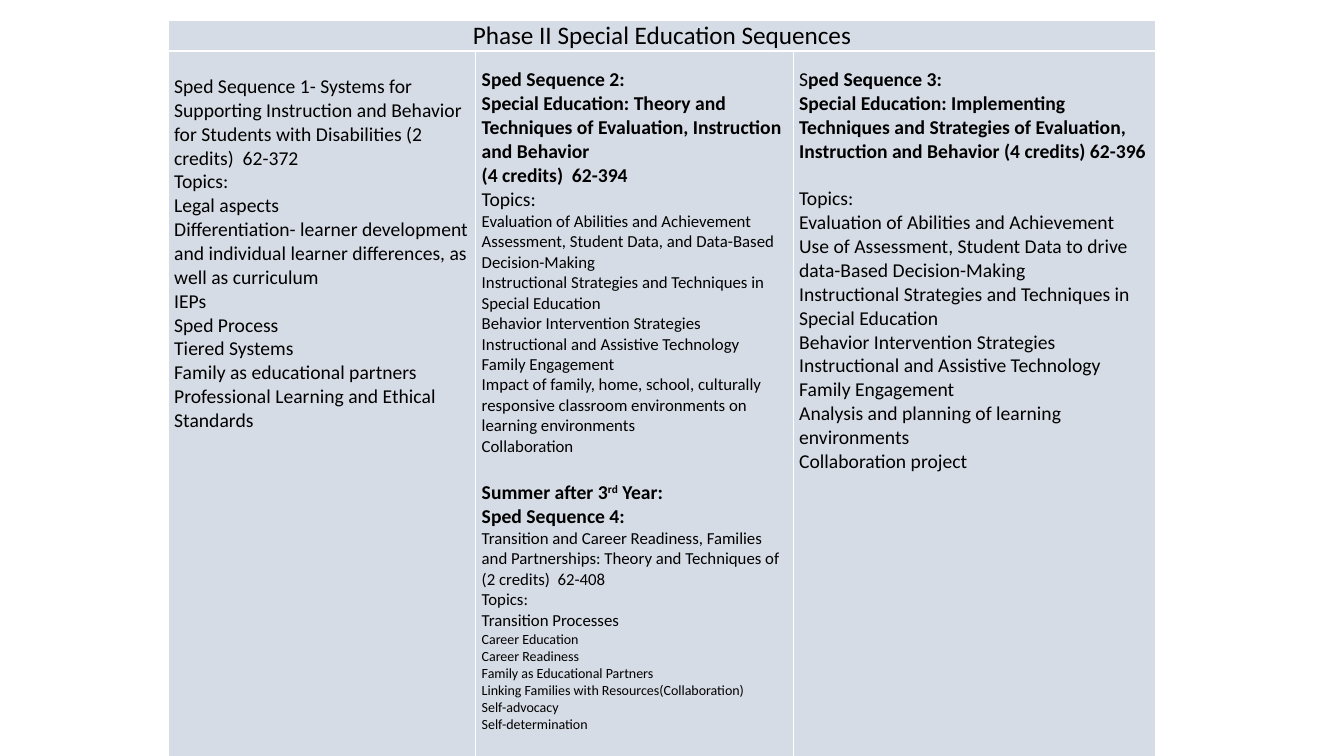
"""Builds the slide with the table of special education sequences."""
import pptx
import pptx.dml.color
import pptx.enum.text
import pptx.oxml
import pptx.util

Cm = pptx.util.Cm
FONT = "Calibri"
INK = "000000"
FILL = "D6DCE5"
LINE = "FFFFFF"
WIDTHS = [7.75, 8, 9.14]
HEIGHTS = [0.76, 19.56]
TITLE = [(18, False, 0, ["Phase II Special Education Sequences"])]

FIRST = [
    (14, False, 0, [
        "Sped Sequence 1- Systems for Supporting Instruction and Behavior "
        "for Students with Disabilities (2 credits)  62-372",
        "Topics:",
        "Legal aspects",
        "Differentiation- learner development and individual learner "
        "differences, as well as curriculum",
        "IEPs",
        "Sped Process",
        "Tiered Systems",
        "Family as educational partners",
        "Professional Learning and Ethical Standards",
    ]),
]

SECOND = [
    (14, True, 0, [
        "Sped Sequence 2:",
        "Special Education: Theory and Techniques of Evaluation, "
        "Instruction and Behavior",
        "(4 credits)  62-394",
    ]),
    (14, False, 0, ["Topics:"]),
    (12, False, 0, [
        "Evaluation of Abilities and Achievement",
        "Assessment, Student Data, and Data-Based Decision-Making",
        "Instructional Strategies and Techniques in Special Education",
        "Behavior Intervention Strategies",
        "Instructional and Assistive Technology",
        "Family Engagement",
        "Impact of family, home, school, culturally responsive classroom "
        "environments on learning environments",
        "Collaboration",
    ]),
    (14, True, 17, ["Summer after 3|rd| Year:", "Sped Sequence 4:"]),
    (12, False, 0, [
        "Transition and Career Readiness, Families and Partnerships: "
        "Theory and Techniques of (2 credits)  62-408",
        "Topics:",
        "Transition Processes",
    ]),
    (10, False, 0, [
        "Career Education",
        "Career Readiness",
        "Family as Educational Partners",
        "Linking Families with Resources(Collaboration)",
        "Self-advocacy",
        "Self-determination",
    ]),
]

THIRD = [
    (14, True, 0, [
        "S|ped Sequence 3:",
        "Special Education: Implementing Techniques and Strategies of "
        "Evaluation, Instruction and Behavior (4 credits) 62-396",
    ]),
    (14, False, 17, [
        "Topics:",
        "Evaluation of Abilities and Achievement",
        "Use of Assessment, Student Data to drive data-Based Decision-Making",
        "Instructional Strategies and Techniques in Special Education",
        "Behavior Intervention Strategies",
        "Instructional and Assistive Technology",
        "Family Engagement",
        "Analysis and planning of learning environments",
        "Collaboration project",
    ]),
]


def paint(color, code):
    color.rgb = pptx.dml.color.RGBColor.from_string(code)


def edge(cell):
    props = cell._tc.get_or_add_tcPr()
    for side in "LRTB":
        props.append(pptx.oxml.parse_xml(
            f'<a:ln{side} xmlns:a="http://schemas.openxmlformats.org/'
            f'drawingml/2006/main" w="12700"><a:solidFill>'
            f'<a:srgbClr val="{LINE}"/></a:solidFill></a:ln{side}>'))


def style(cell, top):
    edge(cell)
    cell.fill.solid()
    paint(cell.fill.fore_color, FILL)
    cell.margin_left = cell.margin_right = Cm(0.15)
    cell.margin_top, cell.margin_bottom = Cm(top), 0


def write(par, text, size, bold):
    for part in text.split("|"):
        run = par.add_run()
        run.text = part
        font = run.font
        font.name, font.size, font.bold = FONT, pptx.util.Pt(size), bold
        paint(font.color, INK)


def fill(cell, blocks, top):
    style(cell, top)
    frame = cell.text_frame
    par = frame.paragraphs[0]
    for size, bold, gap, lines in blocks:
        for rank, text in enumerate(lines):
            if par is None:
                par = frame.add_paragraph()
            if gap and rank == 0:
                par.space_before = pptx.util.Pt(gap)
            write(par, text, size, bold)
            par = None
    return frame.paragraphs


def grid(slide):
    frame = slide.shapes.add_table(
        len(HEIGHTS), len(WIDTHS), Cm(4.24), Cm(0.51),
        Cm(sum(WIDTHS)), Cm(sum(HEIGHTS)))
    table = frame.table
    table.first_row = table.horz_banding = False
    for col, width in zip(table.columns, WIDTHS):
        col.width = Cm(width)
    for row, height in zip(table.rows, HEIGHTS):
        row.height = Cm(height)
    return table


def main():
    deck = pptx.Presentation()
    deck.slide_width, deck.slide_height = Cm(33.87), Cm(19.05)
    slide = deck.slides.add_slide(deck.slide_layouts[6])
    table = grid(slide)

    head = table.cell(0, 0)
    head.merge(table.cell(0, 2))
    title = fill(head, TITLE, 0)
    title[0].alignment = pptx.enum.text.PP_ALIGN.CENTER

    fill(table.cell(1, 0), FIRST, 0.6)
    second = fill(table.cell(1, 1), SECOND, 0.43)
    third = fill(table.cell(1, 2), THIRD, 0.43)

    summer = next(par for par in second if len(par.runs) == 3)
    summer.runs[1]._r.get_or_add_rPr().set("baseline", "30000")
    third[0].runs[0].font.bold = False
    deck.save("out.pptx")


if __name__ == "__main__":
    main()
